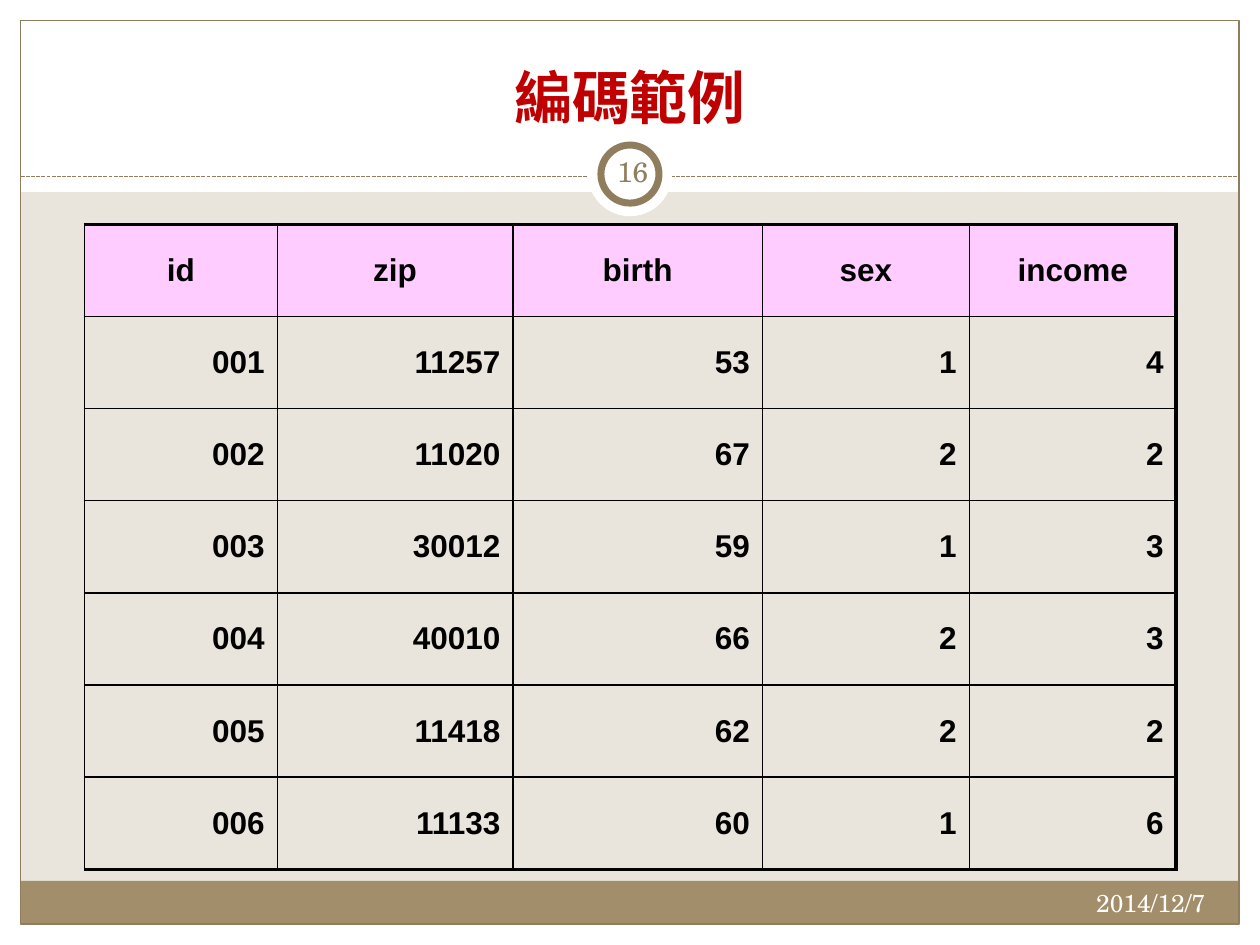
from dataclasses import dataclass

from pptx import Presentation
from pptx.dml.color import RGBColor
from pptx.enum.dml import MSO_LINE
from pptx.enum.shapes import MSO_CONNECTOR, MSO_SHAPE
from pptx.enum.text import MSO_ANCHOR, PP_ALIGN
from pptx.oxml.ns import qn
from pptx.util import Cm, Pt
from lxml import etree

RECTANGLE, OVAL = MSO_SHAPE.RECTANGLE, MSO_SHAPE.OVAL
STRAIGHT, DASH = MSO_CONNECTOR.STRAIGHT, MSO_LINE.SQUARE_DOT
TOP, MIDDLE, BOTTOM = MSO_ANCHOR.TOP, MSO_ANCHOR.MIDDLE, MSO_ANCHOR.BOTTOM
CENTER, RIGHT = PP_ALIGN.CENTER, PP_ALIGN.RIGHT


@dataclass(frozen=True)
class Theme:
    background: str = "E9E5DC"
    white: str = "FFFFFF"
    black: str = "000000"
    footer: str = "A28E6A"
    accent: str = "8F7D5E"
    title: str = "C00000"
    table_header: str = "FFCCFF"
    heading_font: str = "TeX Gyre Schola"
    table_font: str = "Arial"
    title_size: float = 33
    table_size: float = 18
    number_size: float = 16
    date_size: float = 14
    thin_line: float = 0.75
    ring_line: float = 4
    grid_line: float = 1
    edge_line: float = 2.25


THEME = Theme()

# All lengths are in centimetres.
PAGE_WIDTH, PAGE_HEIGHT = 25.4, 19.05
MARGIN = 0.42
HEADERS = ["id", "zip", "birth", "sex", "income"]
RECORDS = [
    ["001", "11257", "53", "1", "4"],
    ["002", "11020", "67", "2", "2"],
    ["003", "30012", "59", "1", "3"],
    ["004", "40010", "66", "2", "3"],
    ["005", "11418", "62", "2", "2"],
    ["006", "11133", "60", "1", "6"],
]
COLUMN_WIDTHS = [3.89, 4.75, 5.03, 4.17, 4.17]


def rgb(color):
    return RGBColor.from_string(color)


def write_text(frame, text, *, size, color, font=THEME.heading_font,
               bold=False, align=CENTER):
    paragraph = frame.paragraphs[0]
    paragraph.alignment = align
    run = paragraph.add_run()
    run.text = text
    run.font.name = font
    run.font.size = Pt(size)
    run.font.bold = bold
    run.font.color.rgb = rgb(color)


def add_text(slide, box, text, *, anchor=TOP, inset=None, **style):
    frame = slide.shapes.add_textbox(*map(Cm, box)).text_frame
    frame.word_wrap = True
    frame.vertical_anchor = anchor
    if inset is not None:
        frame.margin_left = frame.margin_right = Cm(inset)
        frame.margin_top = frame.margin_bottom = Cm(inset)
    write_text(frame, text, **style)


def add_block(slide, box, *, kind=RECTANGLE, fill=None, line=None, weight=THEME.thin_line):
    shape = slide.shapes.add_shape(kind, *map(Cm, box))
    shape.shadow.inherit = False
    if fill:
        shape.fill.solid()
        shape.fill.fore_color.rgb = rgb(fill)
    else:
        shape.fill.background()
    if line:
        shape.line.color.rgb = rgb(line)
        shape.line.width = Pt(weight)
    else:
        shape.line.fill.background()


def add_frame(slide, box):
    """White margins, title band, footer bar and outline."""
    left, top, width, height = box
    inner_width, inner_height = width - 2 * MARGIN, height - 2 * MARGIN
    for band in [
        (left, top + height - MARGIN, width, MARGIN),
        (left, top, width, 3.87),
        (left, top, MARGIN, height),
        (left + width - MARGIN, top, MARGIN, height),
    ]:
        add_block(slide, band, fill=THEME.white)
    footer_height = 0.87
    footer_top = top + height - MARGIN - footer_height
    add_block(slide, (left + MARGIN, footer_top, inner_width, footer_height),
              fill=THEME.footer)
    add_block(slide, (left + MARGIN, top + MARGIN, inner_width, inner_height),
              line=THEME.accent)
    add_text(slide, (left + width - 9.32, footer_top + 0.02, 8.47, 1.02), "2014/12/7",
             size=THEME.date_size, color=THEME.white, align=RIGHT)


def add_header(slide, box):
    """Title, dashed divider along the bottom of the box, and number badge."""
    left, top, width, height = box
    center, divider_y = left + width / 2, top + height
    divider = slide.shapes.add_connector(
        STRAIGHT, Cm(left), Cm(divider_y), Cm(left + width), Cm(divider_y))
    divider.line.color.rgb = rgb(THEME.accent)
    divider.line.width = Pt(THEME.thin_line)
    divider.line.dash_style = DASH
    etree.SubElement(divider._element.spPr, qn("a:effectLst"))

    # Badge: white disc with a ring at the same centre
    badge_y = divider_y - 0.05
    for diameter, line in [(1.7, None), (1.17, THEME.accent)]:
        add_block(slide, (center - diameter / 2, badge_y - diameter / 2, diameter, diameter),
                  kind=OVAL, fill=THEME.white, line=line, weight=THEME.ring_line)
    add_text(slide, (center - 0.58, badge_y - 0.67, 1.27, 1.22), "16",
             anchor=MIDDLE, inset=0.13, size=THEME.number_size, color=THEME.accent)

    add_text(slide, (left + 0.42, top + 0.22, width - 0.84, 2.12), "編碼範例",
             anchor=BOTTOM, size=THEME.title_size, color=THEME.title, bold=True)


def set_borders(cell, weights):
    properties = cell._tc.get_or_add_tcPr()
    for side, weight in weights.items():
        line = etree.SubElement(properties, qn(f"a:ln{side}"), w=str(Pt(weight)))
        fill = etree.SubElement(line, qn("a:solidFill"))
        etree.SubElement(fill, qn("a:srgbClr"), val=THEME.black)


def add_coding_table(slide, box):
    """Survey records, with heavy top, right and bottom edges."""
    rows = [HEADERS] + RECORDS
    last_row, last_column = len(rows) - 1, len(HEADERS) - 1
    table = slide.shapes.add_table(len(rows), len(HEADERS), *map(Cm, box)).table
    table.horz_banding = False
    for column, width in zip(table.columns, COLUMN_WIDTHS):
        column.width = Cm(width)
    for r, values in enumerate(rows):
        table.rows[r].height = Cm(box[3] / len(rows))
        is_header = r == 0
        for c, value in enumerate(values):
            cell = table.cell(r, c)
            cell.vertical_anchor = MIDDLE
            heavy = {"L": False, "R": c == last_column, "T": is_header, "B": r == last_row}
            set_borders(cell, {side: THEME.edge_line if edge else THEME.grid_line
                               for side, edge in heavy.items()})
            if is_header:
                cell.fill.solid()
                cell.fill.fore_color.rgb = rgb(THEME.table_header)
            else:
                cell.fill.background()
            write_text(cell.text_frame, value, size=THEME.table_size, color=THEME.black,
                       font=THEME.table_font, bold=True,
                       align=CENTER if is_header else RIGHT)


def main():
    presentation = Presentation()
    presentation.slide_width, presentation.slide_height = Cm(PAGE_WIDTH), Cm(PAGE_HEIGHT)
    slide = presentation.slides.add_slide(presentation.slide_layouts[6])
    slide.background.fill.solid()
    slide.background.fill.fore_color.rgb = rgb(THEME.background)
    add_frame(slide, (0, 0, PAGE_WIDTH, PAGE_HEIGHT))
    add_header(slide, (MARGIN, MARGIN, PAGE_WIDTH - 2 * MARGIN, 3.14))
    add_coding_table(slide, (1.7, 4.52, sum(COLUMN_WIDTHS), 13.01))
    presentation.save("out.pptx")


if __name__ == "__main__":
    main()
